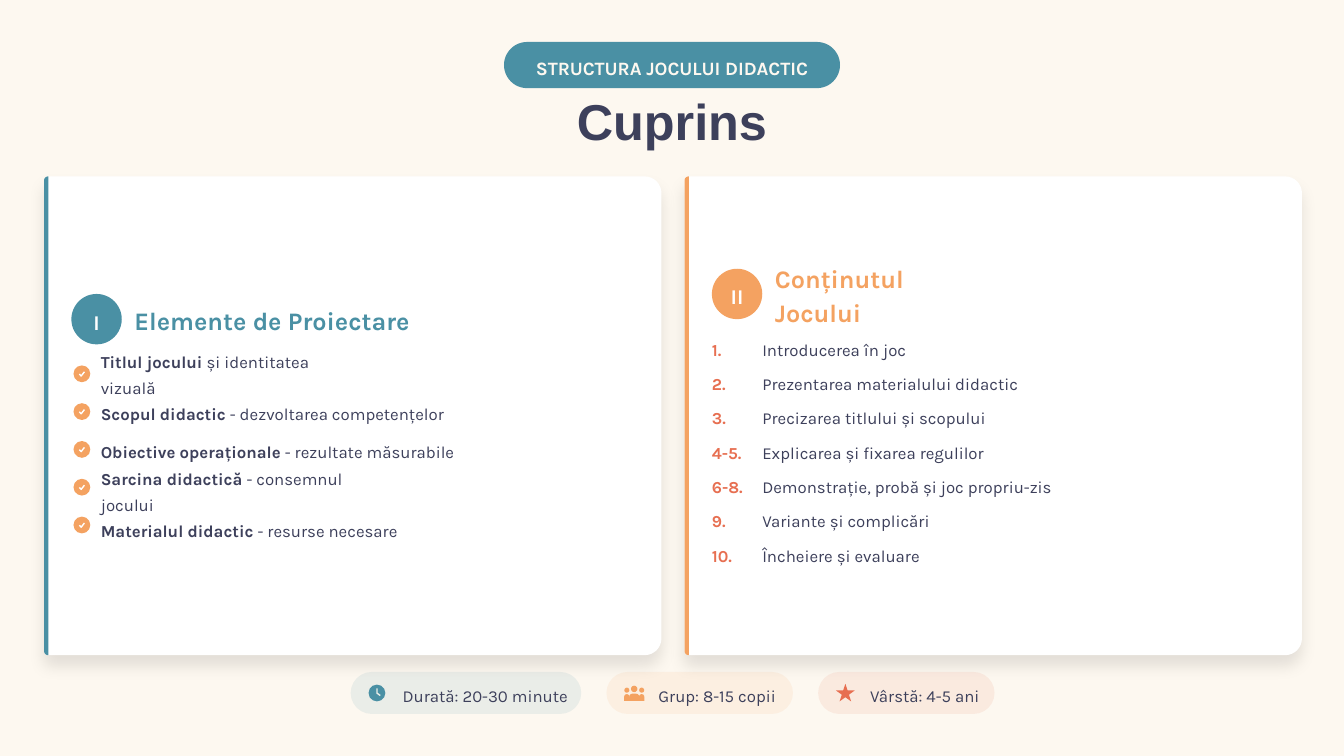
"""Build the contents slide of a lesson-game deck."""
from dataclasses import dataclass
from math import cos, pi, sin
from typing import Callable, Optional

from lxml.etree import SubElement as Sub
from pptx import Presentation as Deck
from pptx.dml.color import RGBColor as Rgb
from pptx.enum.shapes import MSO_SHAPE as Kind
from pptx.enum.text import MSO_ANCHOR as Anchor, MSO_AUTO_SIZE as Fit, PP_ALIGN as Align
from pptx.oxml.ns import qn
from pptx.util import Pt

HUES = {"cream": "FDF8F0", "teal": "4A90A4", "orange": "F4A261", "coral": "E76F51",
        "ink": "3D405B", "white": "FFFFFF", "mist": "EBEEE8"}


@dataclass
class Run:
    """Hold one piece of text and its look."""
    text: str
    size: float = 12
    hue: str = "ink"
    bold: bool = False
    face: str = "Karla"


@dataclass
class Para:
    """Hold one paragraph as lines of runs."""
    lines: list[list[Run]]
    above: float = 0
    ratio: float = 1.3
    align: Align = Align.LEFT
    tab: Optional[float] = None


@dataclass
class Card:
    """Hold one panel with its badge, heading and list."""
    x: float
    hue: str
    mark: str
    head: str
    width: float
    top: float
    box: tuple[float, float, float, float]
    items: list[Para]


@dataclass
class Chip:
    """Hold one fact shown at the foot of the slide."""
    width: float
    hue: str
    text: str
    icon: Callable[[float, float], None]


def shade(hue: str) -> Rgb:
    """Return the named colour."""
    return Rgb.from_string(HUES[hue])


def paint(shape, hue: str) -> None:
    """Give a shape a flat fill, no line and no shadow."""
    shape.fill.solid()
    shape.fill.fore_color.rgb = shade(hue)
    shape.line.fill.background()
    shape.shadow.inherit = False


def form(kind: Kind, x: float, y: float, w: float, h: float, hue: str):
    """Add a flat preset shape."""
    shape = shapes.add_shape(kind, Pt(x), Pt(y), Pt(w), Pt(h))
    paint(shape, hue)
    return shape


def pill(x: float, y: float, w: float, h: float, hue: str):
    """Add a shape with fully round ends."""
    shape = form(Kind.ROUNDED_RECTANGLE, x, y, w, h, hue)
    shape.adjustments[0] = 0.5
    return shape


def trace(dots: list[tuple[float, float]], close: bool):
    """Add an outline through the given points."""
    spots = [(Pt(x), Pt(y)) for x, y in dots]
    pen = shapes.build_freeform(*spots[0])
    pen.add_line_segments(spots[1:], close=close)
    return pen.convert_to_shape()


def panel(x: float, y: float, w: float, h: float, left: float, right: float, hue: str):
    """Add a box with its own radius on the left and right corners."""
    dots = []
    ends = [(x, y, left, 1, 1), (x + w, y, right, -1, 1),
            (x + w, y + h, right, -1, -1), (x, y + h, left, 1, -1)]
    for turn, (px, py, r, dx, dy) in enumerate(ends):
        for step in range(9 if r else 1):
            arc = pi + (turn + step / 8) * pi / 2
            dots.append((px + r * (dx + cos(arc)), py + r * (dy + sin(arc))))
    shape = trace(dots, True)
    paint(shape, hue)
    return shape


def stroke(dots: list[tuple[float, float]], hue: str) -> None:
    """Add a thin open line through the given points."""
    line = trace(dots, False)
    line.fill.background()
    line.line.color.rgb = shade(hue)
    line.line.width = Pt(1)
    line.shadow.inherit = False


def write(frame, paras: list[Para], inset: float = 0, wrap: bool = True) -> None:
    """Fill a text frame run by run."""
    frame.margin_left = Pt(inset)
    frame.margin_top = frame.margin_right = frame.margin_bottom = 0
    frame.word_wrap, frame.auto_size = wrap, Fit.NONE
    frame.vertical_anchor = Anchor.MIDDLE
    for rank, para in enumerate(paras):
        block = frame.add_paragraph() if rank else frame.paragraphs[0]
        props = block._p.get_or_add_pPr()
        props.set("marL", "0")
        props.set("indent", "0")
        Sub(props, qn("a:buNone"))
        if para.tab:
            Sub(Sub(props, qn("a:tabLst")), qn("a:tab"), pos=str(Pt(para.tab)), algn="l")
        block.alignment, block.line_spacing = para.align, para.ratio
        block.space_before, block.space_after = Pt(para.above), Pt(0)
        for row, line in enumerate(para.lines):
            if row:
                block.add_line_break()
            for run in line:
                piece = block.add_run()
                piece.text = run.text
                font = piece.font
                font.name, font.size, font.bold = run.face, Pt(run.size), run.bold
                font.color.rgb = shade(run.hue)


def place(rank: int, x: float, y: float, w: float, h: float, paras: list[Para]) -> None:
    """Move a placeholder to the front and fill it."""
    hold = slide.placeholders[rank]
    hold.left, hold.top, hold.width, hold.height = Pt(x), Pt(y), Pt(w), Pt(h)
    shapes.element.append(hold.element)
    write(hold.text_frame, paras)


def check(x: float, y: float) -> None:
    """Draw a tick in a disc."""
    form(Kind.OVAL, x, y, 12, 12, "orange")
    stroke([(x + 4.2, y + 6.2), (x + 5.5, y + 7.6), (x + 7.8, y + 4.6)], "white")


def clock(x: float, y: float) -> None:
    """Draw a clock."""
    form(Kind.OVAL, x, y, 12, 12, "teal")
    stroke([(x + 6, y + 2.8), (x + 6, y + 6.2), (x + 8.4, y + 7.8)], "mist")


def crowd(x: float, y: float) -> None:
    """Draw three people."""
    for mid, head, low, body in ((1.8, 3.6, 2.2, 3.8), (7.1, 4.6, 0.8, 7.4), (12.4, 3.6, 2.2, 3.8)):
        form(Kind.OVAL, x + mid - head / 2, y + low, head, head, "orange")
        top = low + head + 1
        bust = form(Kind.ROUND_2_SAME_RECTANGLE, x + mid - body / 2, y + top, body, 11.6 - top, "orange")
        bust.adjustments[0] = 0.5


def star(x: float, y: float) -> None:
    """Draw a star."""
    form(Kind.STAR_5_POINT, x, y - 0.6, 13.4, 12.6, "coral")


def fact(term: str, rest: str, more: str = "", above: float = 0) -> Para:
    """Make one item of the left list."""
    lines = [[Run(term, bold=True), Run(rest)]]
    return Para(lines + ([[Run(more)]] if more else []), above)


def stage(rank: int, mark: str, text: str, tab: float) -> Para:
    """Make one item of the right list."""
    return Para([[Run(mark, hue="coral", bold=True), Run("\t" + text)]], 5.8 if rank else 0, tab=tab)


FACTS = [fact("Titlul jocului", " și identitatea", "vizuală"),
         fact("Scopul didactic", " - dezvoltarea competențelor"),
         fact("Obiective operaționale", " - rezultate măsurabile", above=8.8),
         fact("Sarcina didactică", " - consemnul", "jocului"),
         fact("Materialul didactic", " - resurse necesare")]
STAGES = [stage(rank, *row) for rank, row in enumerate([
    ("1.", "Introducerea în joc", 13.7), ("2.", "Prezentarea materialului didactic", 16),
    ("3.", "Precizarea titlului și scopului", 16), ("4-5.", "Explicarea și fixarea regulilor", 28.6),
    ("6-8.", "Demonstrație, probă și joc propriu-zis", 29.4),
    ("9.", "Variante și complicări", 16.2), ("10.", "Încheiere și evaluare", 21.2)])]
CARDS = [Card(31.5, "teal", "I", "Elemente de Proiectare", 202.5, 210, (72, 248.5, 270, 136), FACTS),
         Card(489, "orange", "II", "Conținutul Jocului", 157.5, 192, (508.5, 240, 270, 162), STAGES)]
CHIPS = [Chip(164.7, "teal", "Durată: 20-30 minute", clock),
         Chip(133.2, "orange", "Grup: 8-15 copii", crowd),
         Chip(126, "coral", "Vârstă: 4-5 ani", star)]

deck = Deck()
deck.slide_width, deck.slide_height = Pt(960), Pt(540)
slide = deck.slides.add_slide(deck.slide_layouts[4])
shapes = slide.shapes
slide.background.fill.solid()
slide.background.fill.fore_color.rgb = shade("cream")

tag = pill(360, 30, 240, 33, "teal")
write(tag.text_frame, [Para([[Run("STRUCTURA JOCULUI DIDACTIC", 13.5, "cream", True)]], align=Align.CENTER)])
place(0, 21, 72, 918, 36, [Para([[Run("Cuprins", 36, "ink", True, "Arial")]], ratio=0.8, align=Align.CENTER)])

for rank, card in enumerate(CARDS):
    base = panel(card.x, 126, 441, 342, 3, 12, "white")
    cast = Sub(base.element.spPr.find(qn("a:effectLst")), qn("a:outerShdw"), blurRad=str(Pt(11.2)),
               dist=str(Pt(7.5)), dir="5400000", algn="ctr", rotWithShape="0")
    Sub(Sub(cast, qn("a:srgbClr"), val="000000"), qn("a:alpha"), val="10000")
    panel(card.x, 126, 3, 342, 3, 0, card.hue)
    badge = form(Kind.OVAL, card.x + 19.5, card.top, 36, 36, card.hue)
    write(badge.text_frame, [Para([[Run(card.mark, 15, "white", True)]], ratio=1.2, align=Align.CENTER)], wrap=False)
    place(2 * rank + 1, card.x + 64.5, card.top + 6, card.width, 24,
          [Para([[Run(card.head, 18, card.hue, True)]], ratio=1.1)])
    place(2 * rank + 2, *card.box, card.items)
for rank in range(len(FACTS)):
    check(52.5, 261 + 27 * rank)

left = 250.5
for chip in CHIPS:
    base = pill(left, 480, chip.width, 30, chip.hue)
    Sub(base.element.spPr.find(".//" + qn("a:srgbClr")), qn("a:alpha"), val="10000")
    write(base.text_frame, [Para([[Run(chip.text)]])], 32.75, False)
    chip.icon(left + 12.75, 489)
    left += chip.width + 18
deck.save("out.pptx")
